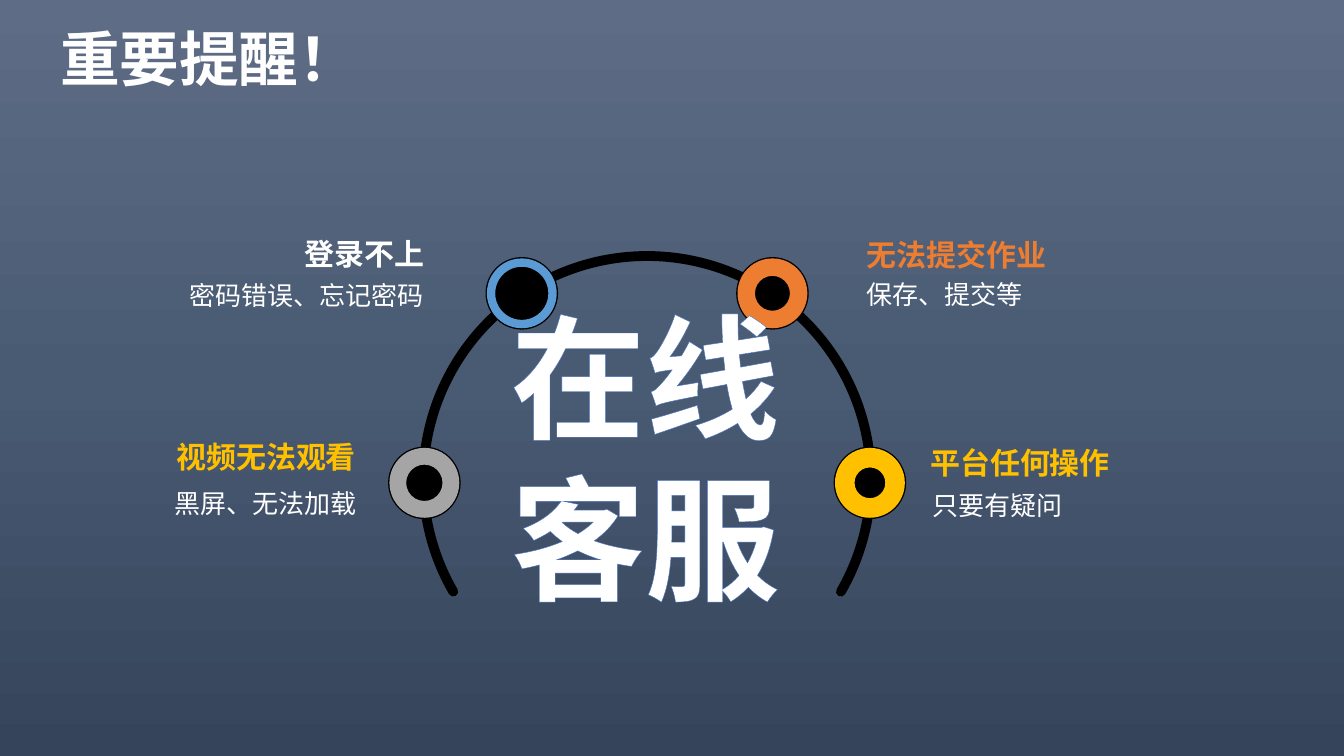
from copy import deepcopy

from lxml.etree import SubElement
from pptx import Presentation
from pptx.dml.color import RGBColor
from pptx.enum.shapes import MSO_SHAPE as Shape
from pptx.enum.text import MSO_AUTO_SIZE as AutoSize, PP_ALIGN as Align
from pptx.oxml.ns import qn
from pptx.util import Inches, Pt

WHITE = RGBColor(0xFF, 0xFF, 0xFF)
BLACK = RGBColor(0x00, 0x00, 0x00)
BLUE = RGBColor(0x5B, 0x9B, 0xD5)
ORANGE = RGBColor(0xED, 0x7D, 0x31)
GOLD = RGBColor(0xFF, 0xC0, 0x00)
GREY = RGBColor(0xA5, 0xA5, 0xA5)
OUTLINE = RGBColor(0x44, 0x72, 0xC4)
BACKDROP = [
    (0, RGBColor(0x5E, 0x6D, 0x85)),
    (0.5, RGBColor(0x49, 0x5A, 0x73)),
    (1, RGBColor(0x35, 0x44, 0x5A)),
]
CJK = "Noto Sans CJK SC"

deck = Presentation()
deck.slide_width, deck.slide_height = Inches(40 / 3), Inches(7.5)
page = deck.slides.add_slide(deck.slide_layouts[6])
CELL = deck.slide_width / 40  # square grid of 40 columns by 22.5 rows


def add_round(kind, center_x, center_y, size):
    """Add a shape of equal width and height around a centre given in cells."""
    corner = [round((c - size / 2) * CELL) for c in (center_x, center_y)]
    shape = page.shapes.add_shape(kind, *corner, round(size * CELL), round(size * CELL))
    shape.shadow.inherit = False
    return shape


def add_text(lines, area, align, look, margin=0, spacing=None):
    """Add a text box; area is left, top, width, height in cells."""
    box = page.shapes.add_textbox(*(round(n * CELL) for n in area))
    frame = box.text_frame
    frame.word_wrap = True
    if not margin:
        for side in ("left", "top", "right", "bottom"):
            setattr(frame, f"margin_{side}", 0)
    for number, line in enumerate(lines):
        para = frame.add_paragraph() if number else frame.paragraphs[0]
        para.alignment = align
        if spacing:
            para.line_spacing = spacing
        span = para.add_run()
        span.text = line
        for name, value in look.items():
            if name == "color":
                span.font.color.rgb = value
            else:
                setattr(span.font, name, value)
        east_asian = SubElement(span.font._element, qn("a:ea"))
        east_asian.set("typeface", look["name"])
    return frame


# Background gradient
backdrop = page.background.fill
backdrop.gradient()
backdrop.gradient_angle = 270
stops = page._element.find(".//" + qn("a:gsLst"))
stops.insert(1, deepcopy(stops[0]))
for stop, (position, color) in zip(backdrop.gradient_stops, BACKDROP):
    stop.position = position
    stop.color.rgb = color

# Open ring, from 150 degrees clockwise to 30 degrees
MIDDLE_X, MIDDLE_Y, RADIUS = 19.26, 14.28, 6.66
arc = add_round(Shape.ARC, MIDDLE_X, MIDDLE_Y, 2 * RADIUS)
for index, degrees in enumerate((150, 30)):
    arc.adjustments[index] = degrees * 60000 / 100000
arc.fill.background()
arc.line.color.rgb = BLACK
arc.line.width = Pt(7)
arc.line._get_or_add_ln().set("cap", "rnd")

# Badges: distance from the middle, row, colour, ring thickness
badges = [
    (-3.73, 8.73, BLUE, 0.12),
    (3.73, 8.73, ORANGE, 0.25),
    (-6.63, 14.37, GREY, 0.24),
    (6.63, 14.37, GOLD, 0.28),
]
for offset, row, color, thickness in badges:
    for kind, size, fill in ((Shape.OVAL, 2.16, BLACK), (Shape.DONUT, 2.08, color)):
        badge = add_round(kind, MIDDLE_X + offset, row, size)
        badge.fill.solid()
        badge.fill.fore_color.rgb = fill
        badge.line.fill.background()
    badge.adjustments[0] = thickness

# Captions: heading, colour, area; detail, area; alignment
captions = [
    ("登录不上", WHITE, (5.4, 7, 7.23, 0.8),
     "密码错误、忘记密码", (1.26, 8.13, 11.34, 1.8), Align.RIGHT),
    ("无法提交作业", ORANGE, (25.8, 7.05, 7.23, 0.8),
     "保存、提交等", (25.8, 8.1, 9.72, 1.23), Align.LEFT),
    ("视频无法观看", GOLD, (0.87, 13.05, 9.72, 1.2),
     "黑屏、无法加载", (0.3, 14.31, 10.32, 1.53), Align.RIGHT),
    ("平台任何操作", GOLD, (27.69, 13.23, 7.23, 1.05),
     "只要有疑问", (27.75, 14.37, 11.43, 1.08), Align.LEFT),
]
for heading, color, heading_area, detail, detail_area, align in captions:
    add_text([detail], detail_area, align,
             {"name": CJK, "size": Pt(18.6), "color": WHITE}, spacing=1.2)
    add_text([heading], heading_area, align,
             {"name": CJK, "size": Pt(21.4), "bold": True, "color": color})

# Centre words with a thin outline
center = add_text(["在线", "客服"], (14.88, 8.61, 8.64, 9.99), Align.CENTER,
                  {"name": "Calibri", "size": Pt(96), "bold": True, "color": WHITE}, margin=1)
center.word_wrap = False
center.auto_size = AutoSize.SHAPE_TO_FIT_TEXT
for para in center.paragraphs:
    font_element = para.runs[0].font._element
    edge = SubElement(font_element, qn("a:ln"), w=str(Pt(0.8)))
    font_element.insert(0, edge)
    paint = SubElement(edge, qn("a:solidFill"))
    SubElement(paint, qn("a:srgbClr"), val=str(OUTLINE))

# Title
title = add_text(["重要提醒！"], (0.3, 0.51, 11.85, 2.46), Align.CENTER,
                 {"name": CJK, "size": Pt(42.6), "bold": True, "color": WHITE}, margin=1)
title.auto_size = AutoSize.SHAPE_TO_FIT_TEXT

deck.save("out.pptx")
